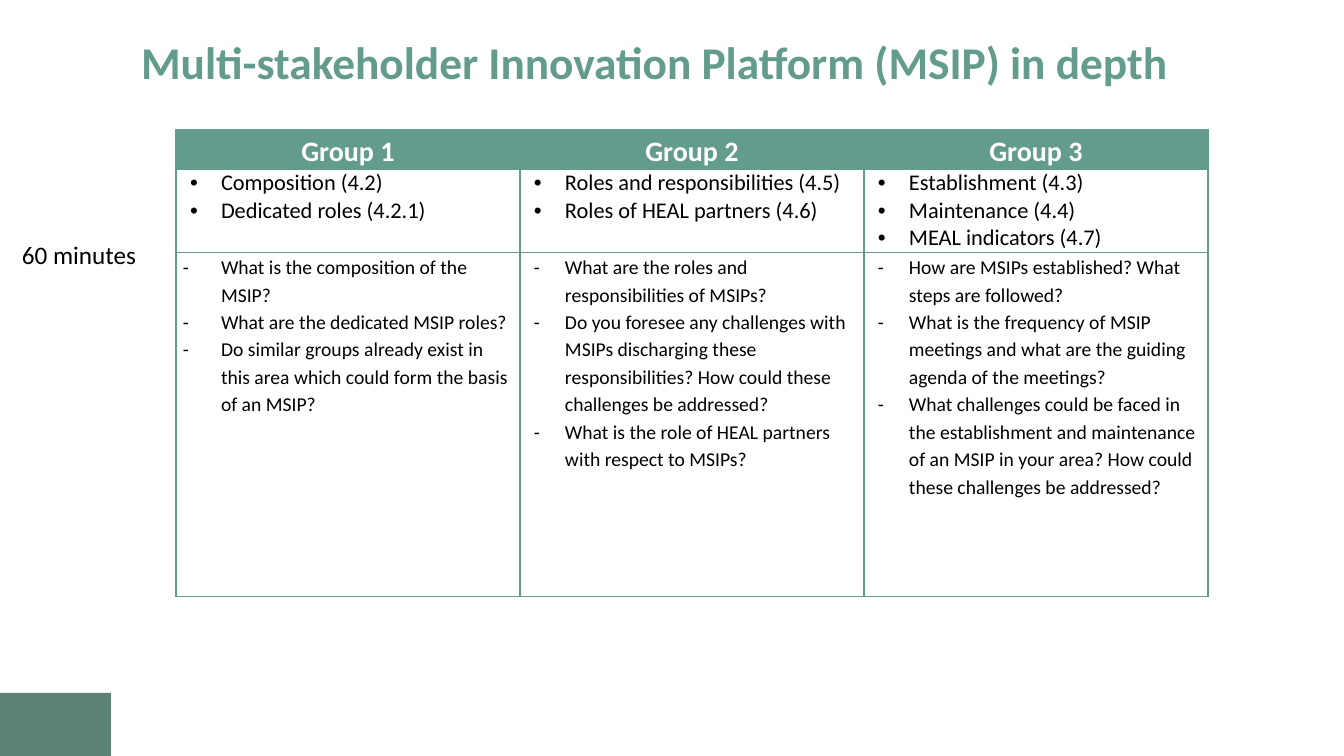
from lxml.etree import SubElement
from pptx import Presentation
from pptx.dml.color import RGBColor
from pptx.enum.shapes import MSO_SHAPE
from pptx.enum.text import MSO_ANCHOR, MSO_AUTO_SIZE, PP_ALIGN
from pptx.oxml.ns import qn
from pptx.util import Emu, Pt

GREEN = RGBColor(0x63, 0x9C, 0x8C)
MOSS = RGBColor(0x5B, 0x84, 0x77)
WHITE = RGBColor(0xFF, 0xFF, 0xFF)
BLACK = RGBColor(0, 0, 0)

GROUPS = [
    ("Group 1",
     ["Composition (4.2)", "Dedicated roles (4.2.1)"],
     ["What is the composition of the MSIP?",
      "What are the dedicated MSIP roles?",
      "Do similar groups already exist in this area which could form the basis of an MSIP?"]),
    ("Group 2",
     ["Roles and responsibilities (4.5)", "Roles of HEAL partners (4.6)"],
     ["What are the roles and responsibilities of MSIPs?",
      "Do you foresee any challenges with MSIPs discharging these responsibilities? "
      "How could these challenges be addressed?",
      "What is the role of HEAL partners with respect to MSIPs?"]),
    ("Group 3",
     ["Establishment (4.3)", "Maintenance (4.4)", "MEAL indicators (4.7)"],
     ["How are MSIPs established? What steps are followed?",
      "What is the frequency of MSIP meetings and what are the guiding agenda of the meetings?",
      "What challenges could be faced in the establishment and maintenance of an MSIP "
      "in your area? How could these challenges be addressed?"]),
]


def px(size):
    return Emu(round(size * 914400 / 100.8))


def apply(item, values):
    for name, value in values.items():
        setattr(item, name, value)


class Board:
    """Holds the text style and the slide that is being built."""

    font = "Calibri"

    def __init__(self, slide):
        self.slide = slide

    def text(self, frame, lines, size, color, bold=False, bullet=None, **form):
        for i, line in enumerate(lines):
            para = frame.paragraphs[0] if i == 0 else frame.add_paragraph()
            if bullet:
                self.mark(para, *bullet)
            apply(para, form)
            run = para.add_run()
            run.text = line
            apply(run.font, {"name": self.font, "size": Pt(size), "bold": bold})
            run.font.color.rgb = color

    def mark(self, para, sign, left, hang):
        props = para._p.get_or_add_pPr()
        props.set("marL", str(px(left)))
        props.set("indent", str(-px(hang)))
        SubElement(props, qn("a:buFont")).set("typeface", "Arial" if sign == "•" else self.font)
        SubElement(props, qn("a:buChar")).set("char", sign)

    def block(self, x, y, w, h, color):
        shape = self.slide.shapes.add_shape(MSO_SHAPE.RECTANGLE, px(x), px(y), px(w), px(h))
        shape.shadow.inherit = False
        shape.fill.solid()
        shape.fill.fore_color.rgb = color
        shape.line.fill.background()

    def title(self, x, y, w, h, text):
        box = self.slide.shapes.title
        apply(box, {"left": px(x), "top": px(y), "width": px(w), "height": px(h)})
        apply(box.text_frame, {"auto_size": MSO_AUTO_SIZE.NONE, "word_wrap": True,
                               "vertical_anchor": MSO_ANCHOR.MIDDLE})
        self.text(box.text_frame, [text], 32.4, GREEN, True,
                  alignment=PP_ALIGN.LEFT, line_spacing=0.9)

    def label(self, x, y, w, h, text):
        frame = self.slide.shapes.add_textbox(px(x), px(y), px(w), px(h)).text_frame
        frame.word_wrap = True
        self.text(frame, [text], 18, BLACK, alignment=PP_ALIGN.CENTER)

    def grid(self, x, y, width, rows, cols):
        table = self.slide.shapes.add_table(
            rows=len(rows), cols=cols, left=px(x), top=px(y),
            width=px(width * cols), height=px(sum(rows))).table
        apply(table, {"first_row": False, "horz_banding": False})
        for row, high in zip(table.rows, rows):
            row.height = px(high)
        for col in table.columns:
            col.width = px(width)
        for cell in table.iter_cells():
            apply(cell, {"margin_left": px(7), "margin_right": px(7),
                         "margin_top": 0, "margin_bottom": 0})
            self.frame(cell)
            cell.fill.background()
        return table

    def frame(self, cell):
        props = cell._tc.get_or_add_tcPr()
        for side in ("lnL", "lnR", "lnT", "lnB"):
            line = SubElement(props, qn("a:" + side))
            line.set("w", str(Pt(1)))
            fill = SubElement(line, qn("a:solidFill"))
            SubElement(fill, qn("a:srgbClr")).set("val", str(GREEN))


def main():
    deck = Presentation()
    deck.slide_width, deck.slide_height = px(1344), px(756)
    board = Board(deck.slides.add_slide(deck.slide_layouts[5]))
    board.block(0, 693, 111, 63, MOSS)
    board.title(131, 29, 1120, 72, "Multi-stakeholder Innovation Platform (MSIP) in depth")
    table = board.grid(176, 130, 344, [39, 83, 344], len(GROUPS))
    for col, (name, topics, asks) in enumerate(GROUPS):
        head, body, foot = (table.cell(row, col) for row in range(3))
        head.fill.solid()
        head.fill.fore_color.rgb = GREEN
        board.text(head.text_frame, [name], 20, WHITE, True, alignment=PP_ALIGN.CENTER,
                   line_spacing=1.15, space_after=Pt(12))
        board.text(body.text_frame, topics, 16, BLACK, bullet=("•", 38, 31))
        hang = 38 if col == 0 else 31
        board.text(foot.text_frame, asks, 14, BLACK, bullet=("-", 38, hang), line_spacing=1.15)
    board.label(9, 234, 140, 40, "60 minutes")
    deck.save("out.pptx")


if __name__ == "__main__":
    main()
